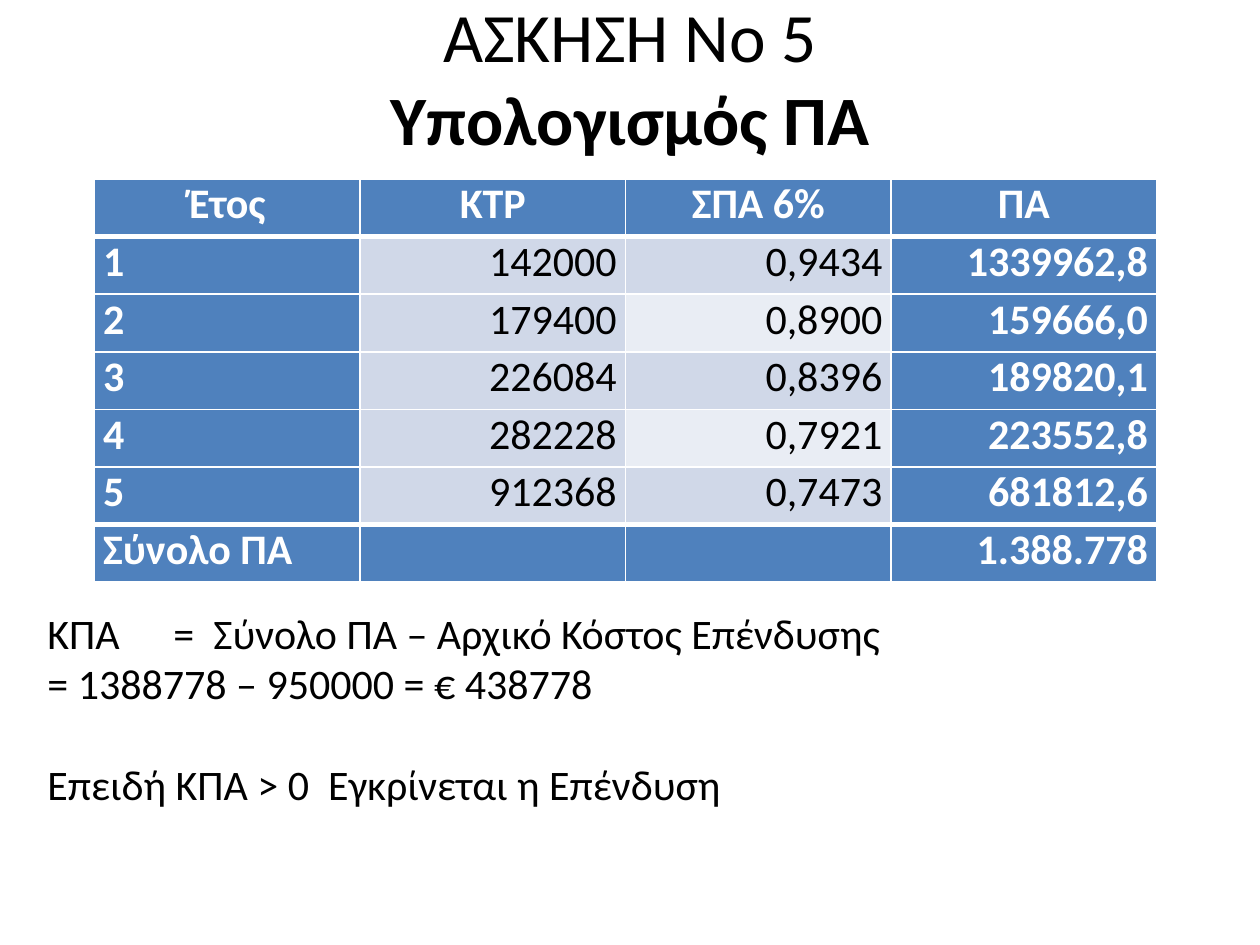
from lxml import etree
from pptx import Presentation
from pptx import util as u
from pptx.dml.color import RGBColor
from pptx.enum import text
from pptx.oxml.ns import qn

FONT = "Calibri"
BLACK, WHITE, BLUE = "000000", "FFFFFF", "4F81BD"
DARK_BAND, LIGHT_BAND = "D0D8E8", "E9EDF4"
LEFT, CENTER, RIGHT = text.PP_ALIGN.LEFT, text.PP_ALIGN.CENTER, text.PP_ALIGN.RIGHT

ROWS = [
    ("Έτος", "ΚΤΡ", "ΣΠΑ 6%", "ΠΑ"),
    ("1", "142000", "0,9434", "1339962,8"),
    ("2", "179400", "0,8900", "159666,0"),
    ("3", "226084", "0,8396", "189820,1"),
    ("4", "282228", "0,7921", "223552,8"),
    ("5", "912368", "0,7473", "681812,6"),
    ("Σύνολο ΠΑ", "", "", "1.388.778"),
]


def color(hex_value):
    return RGBColor.from_string(hex_value)


def add_run(paragraph, words, size, hex_value=BLACK, bold=False):
    run = paragraph.add_run()
    run.text = words
    run.font.name, run.font.size, run.font.bold = FONT, u.Pt(size), bold
    run.font.color.rgb = color(hex_value)


def add_text_box(slide, box):
    frame = slide.shapes.add_textbox(*(u.Pt(length) for length in box)).text_frame
    frame.word_wrap = True
    return frame


def set_borders(cell, top, bottom):
    properties = cell._tc.get_or_add_tcPr()
    for side, width in (("L", 1), ("R", 1), ("T", top), ("B", bottom)):
        line = etree.SubElement(properties, qn(f"a:ln{side}"), w=str(u.Pt(width)))
        fill = etree.SubElement(line, qn("a:solidFill"))
        etree.SubElement(fill, qn("a:srgbClr"), val=WHITE)


def add_title(slide, box):
    frame = add_text_box(slide, box)
    frame.vertical_anchor = text.MSO_ANCHOR.MIDDLE
    paragraph = frame.paragraphs[0]
    paragraph.alignment = CENTER
    add_run(paragraph, "ΑΣΚΗΣΗ Νο 5", 39.6)
    paragraph.add_line_break()
    add_run(paragraph, "Υπολογισμός ΠΑ", 39.6, bold=True)


def add_value_table(slide, box):
    last_row, last_column = len(ROWS) - 1, len(ROWS[0]) - 1
    table = slide.shapes.add_table(
        len(ROWS), len(ROWS[0]), *(u.Pt(length) for length in box)).table
    for column in table.columns:
        column.width = u.Pt(box[2] / len(ROWS[0]))
    for i, row in enumerate(ROWS):
        table.rows[i].height = u.Pt(box[3] / len(ROWS))
        for j, words in enumerate(row):
            cell = table.cell(i, j)
            cell.margin_left = cell.margin_right = u.Pt(5)
            cell.margin_top = cell.margin_bottom = 0

            # Thick rules below the header and above the total
            set_borders(cell, 3 if i in (1, last_row) else 1,
                        3 if i in (0, last_row - 1) else 1)

            # Blue frame of cells around the banded figures
            edge = i in (0, last_row) or j in (0, last_column)
            band = LIGHT_BAND if j == 2 and i % 2 == 0 else DARK_BAND
            cell.fill.solid()
            cell.fill.fore_color.rgb = color(BLUE if edge else band)

            paragraph = cell.text_frame.paragraphs[0]
            paragraph.alignment = CENTER if i == 0 else LEFT if j == 0 else RIGHT
            if words:
                add_run(paragraph, words, 24, WHITE if edge else BLACK, edge)


def add_conclusion(slide, box):
    frame = add_text_box(slide, box)
    lines = (
        ("ΚΠΑ \t=  Σύνολο ΠΑ – Αρχικό Κόστος Επένδυσης", 0),
        ("= 1388778 – 950000 = € 438778", 0),
        ("Επειδή ΚΠΑ > 0  Εγκρίνεται η Επένδυση", 29),
    )
    for i, (words, gap) in enumerate(lines):
        paragraph = frame.add_paragraph() if i else frame.paragraphs[0]
        paragraph.space_before = u.Pt(gap)
        add_run(paragraph, words, 24)


def main():
    presentation = Presentation()
    presentation.slide_width, presentation.slide_height = u.Pt(720), u.Pt(540)
    slide = presentation.slides.add_slide(presentation.slide_layouts[6])
    add_title(slide, (54, 21, 612, 45))
    add_value_table(slide, (54, 102.3, 607, 230.4))
    add_conclusion(slide, (20, 343.5, 646.5, 124))
    presentation.save("out.pptx")


if __name__ == "__main__":
    main()
